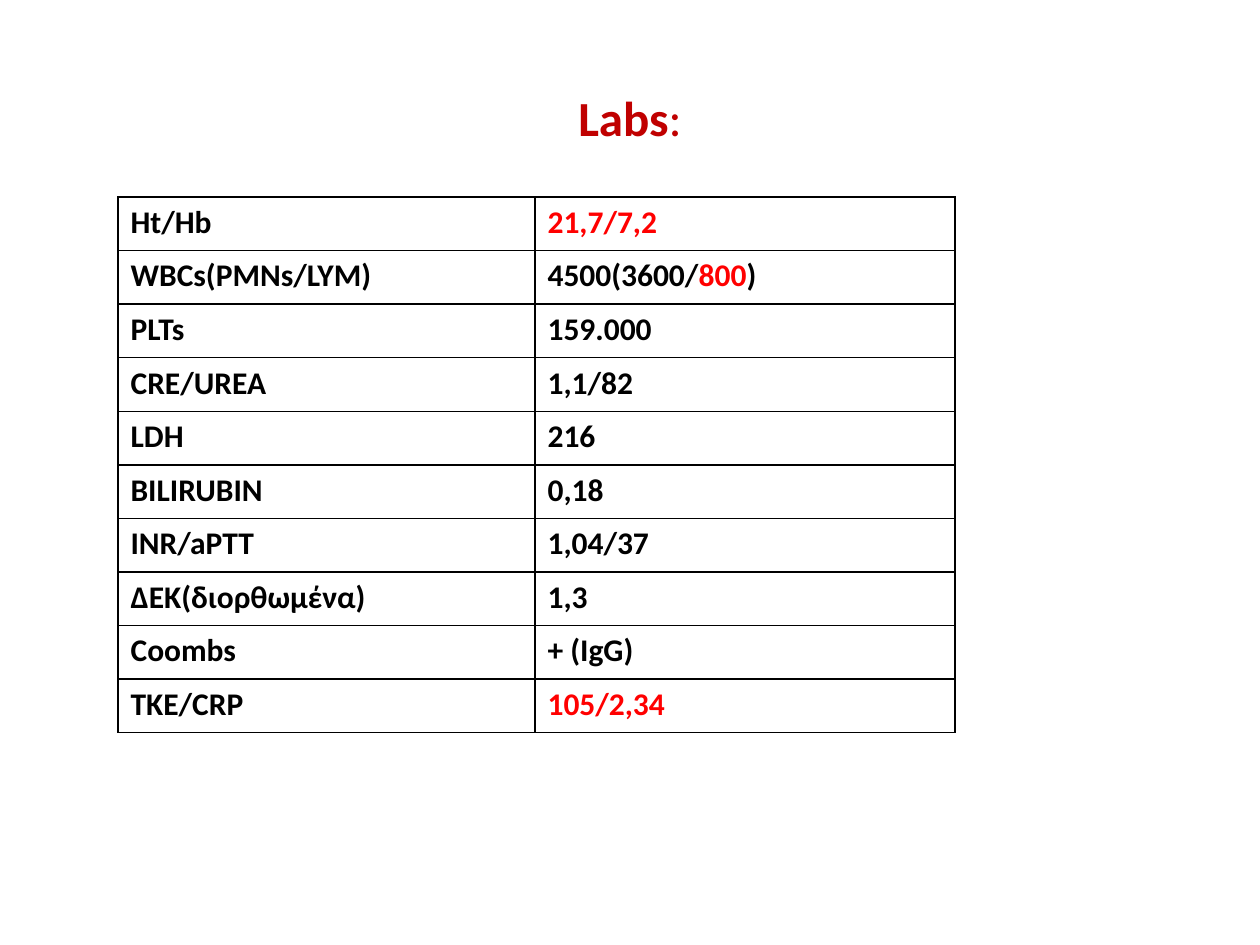
from lxml.etree import SubElement
from pptx import Presentation
from pptx.dml.color import RGBColor
from pptx.enum.text import MSO_ANCHOR, PP_ALIGN
from pptx.oxml.ns import qn
from pptx.util import Pt

EMU_PER_PX = 914400 / 126
BLACK, RED, DARK_RED = "000000", "FF0000", "C00000"

LABS = [
    ("Ht/Hb", [("21,7/7,2", RED)]),
    ("WBCs(PMNs/LYM)", [("4500(3600/", BLACK), ("800", RED), (")", BLACK)]),
    ("PLTs", [("159.000", BLACK)]),
    ("CRE/UREA", [("1,1/82", BLACK)]),
    ("LDH", [("216", BLACK)]),
    ("BILIRUBIN", [("0,18", BLACK)]),
    ("INR/aPTT", [("1,04/37", BLACK)]),
    ("ΔΕΚ(διορθωμένα)", [("1,3", BLACK)]),
    ("Coombs", [("+ (IgG)", BLACK)]),
    ("ΤΚΕ/CRP", [("105/2,34", RED)]),
]


def px(length):
    return round(length * EMU_PER_PX)


def color(hex_value):
    return RGBColor.from_string(hex_value)


class SlideBuilder:
    """Holds the text style and the page being filled."""

    font_name = "Calibri"
    title_size = 28
    cell_size = 18
    border_width = 1

    def __init__(self, deck):
        self.page = deck.slides.add_slide(deck.slide_layouts[5])

    def span(self, para, text, size, hex_value, bold=True):
        run = para.add_run()
        run.text = text
        style = {"name": self.font_name, "size": Pt(size), "bold": bold}
        for name, value in style.items():
            setattr(run.font, name, value)
        run.font.color.rgb = color(hex_value)

    def title(self, spans, left, top, width, height):
        """Fill the title placeholder with (text, bold) spans."""
        box = self.page.shapes.title
        place = {"left": left, "top": top, "width": width, "height": height}
        for name, value in place.items():
            setattr(box, name, px(value))
        box.text_frame.vertical_anchor = MSO_ANCHOR.MIDDLE
        para = box.text_frame.paragraphs[0]
        para.alignment = PP_ALIGN.CENTER
        for text, bold in spans:
            self.span(para, text, self.title_size, DARK_RED, bold)

    def border(self, cell):
        properties = cell._tc.get_or_add_tcPr()
        for position, side in enumerate(("a:lnL", "a:lnR", "a:lnT", "a:lnB")):
            line = SubElement(properties, qn(side), w=str(Pt(self.border_width)))
            fill = SubElement(line, qn("a:solidFill"))
            SubElement(fill, qn("a:srgbClr"), val=BLACK)
            properties.insert(position, line)

    def cell(self, cell, spans):
        cell.fill.background()
        self.border(cell)
        for text, hex_value in spans:
            self.span(cell.text_frame.paragraphs[0], text, self.cell_size, hex_value)

    def table(self, rows, left, top, column_widths, height):
        frame = self.page.shapes.add_table(
            len(rows), len(column_widths),
            px(left), px(top), px(sum(column_widths)), px(height))
        table = frame.table
        table.first_row = table.horz_banding = False
        for column, width in zip(table.columns, column_widths):
            column.width = px(width)
        for index, (label, result) in enumerate(rows):
            table.rows[index].height = px(height / len(rows))
            self.cell(table.cell(index, 0), [(label, BLACK)])
            self.cell(table.cell(index, 1), result)


def main():
    deck = Presentation()
    deck.slide_width, deck.slide_height = px(1260), px(945)
    builder = SlideBuilder(deck)
    builder.title([("Labs", True), (":", False)], 63, 38, 1134, 158)
    builder.table(LABS, 118, 197, (417, 420), 536)
    deck.save("out.pptx")


if __name__ == "__main__":
    main()
